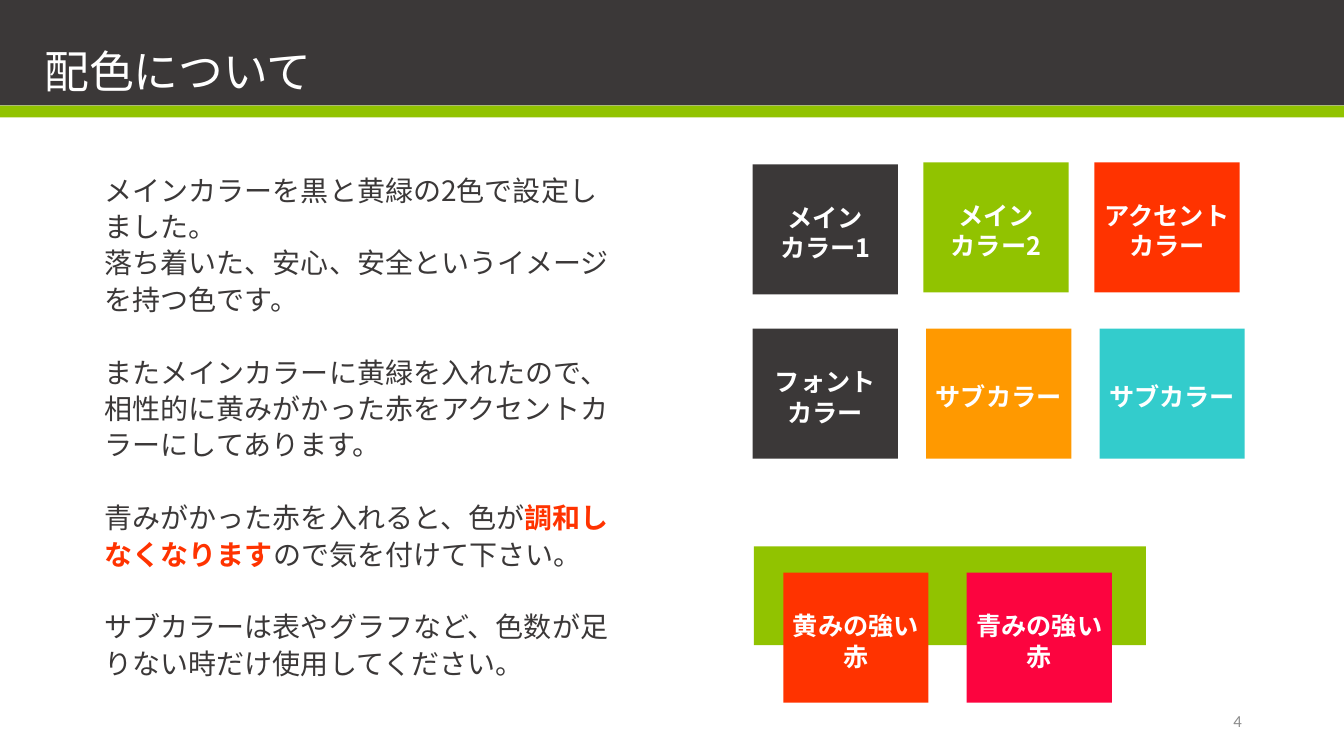
from lxml import etree
from pptx import Presentation
from pptx.dml.color import RGBColor
from pptx.enum.shapes import MSO_SHAPE
from pptx.enum.text import MSO_ANCHOR, MSO_AUTO_SIZE, PP_ALIGN
from pptx.oxml.ns import qn
from pptx.util import Cm, Pt

CHARCOAL = RGBColor(0x3B, 0x38, 0x38)
LIME = RGBColor(0x91, 0xC3, 0x00)
WARM_RED = RGBColor(0xFF, 0x33, 0x00)
COOL_RED = RGBColor(0xFC, 0x04, 0x3F)
ORANGE = RGBColor(0xFF, 0x99, 0x00)
TURQUOISE = RGBColor(0x33, 0xCC, 0xCC)
WHITE = RGBColor(0xFF, 0xFF, 0xFF)
GRAY = RGBColor(0x8C, 0x8C, 0x8C)

JAPANESE_FONT = "Noto Sans CJK JP"
SLIDE_WIDTH, SLIDE_HEIGHT = 33.87, 19.05
SWATCH_WIDTH, SWATCH_HEIGHT = 3.66, 3.28
BODY_LINE = Pt(26)

# Each paragraph: whether a gap precedes it, then its (text, emphasized) runs.
BODY = [
    (False, [("メインカラーを黒と黄緑の2色で設定しました。", False)]),
    (False, [("落ち着いた、安心、安全というイメージを持つ色です。", False)]),
    (True, [("またメインカラーに黄緑を入れたので、"
             "相性的に黄みがかった赤をアクセントカラーにしてあります。", False)]),
    (True, [("青みがかった赤を入れると、色が", False),
            ("調和しなくなります", True),
            ("ので気を付けて下さい。", False)]),
    (True, [("サブカラーは表やグラフなど、"
             "色数が足りない時だけ使用してください。", False)]),
]


def add_run(paragraph, text, size, color, bold=False, font=JAPANESE_FONT):
    run = paragraph.add_run()
    run.text = text
    run.font.size = Pt(size)
    run.font.bold = bold
    run.font.color.rgb = color
    run.font.name = font
    latin = run.font._element.find(qn("a:latin"))
    east_asian = etree.Element(qn("a:ea"), typeface=font)
    latin.addnext(east_asian)


def write_lines(frame, text, align=PP_ALIGN.LEFT, **run_format):
    """Put each line of text in a paragraph of its own, centred vertically."""
    frame.word_wrap = True
    frame.auto_size = MSO_AUTO_SIZE.NONE
    frame.vertical_anchor = MSO_ANCHOR.MIDDLE
    for index, line in enumerate(text.split("\n")):
        paragraph = frame.add_paragraph() if index else frame.paragraphs[0]
        paragraph.alignment = align
        add_run(paragraph, line, **run_format)


def add_rectangle(slide, left, top, width, height, color):
    shape = slide.shapes.add_shape(
        MSO_SHAPE.RECTANGLE, Cm(left), Cm(top), Cm(width), Cm(height))
    shape.shadow.inherit = False
    shape.fill.solid()
    shape.fill.fore_color.rgb = color
    shape.line.fill.background()
    return shape


def add_header(slide, height, stripe, text):
    title = slide.shapes.title
    title.left, title.top = Cm(0.86), Cm(0.94)
    title.width, title.height = Cm(14.1), Cm(1.7)
    write_lines(title.text_frame, text, size=32, color=WHITE)
    bars = [(0, height - stripe, CHARCOAL), (height - stripe, stripe, LIME)]
    for top, bar_height, color in bars:
        bar = add_rectangle(slide, 0, top, SLIDE_WIDTH, bar_height, color)
        title.element.addprevious(bar.element)


def add_body(slide, left, top, width, height):
    box = slide.shapes.add_textbox(Cm(left), Cm(top), Cm(width), Cm(height))
    frame = box.text_frame
    frame.word_wrap = True
    for index, (gap, runs) in enumerate(BODY):
        paragraph = frame.add_paragraph() if index else frame.paragraphs[0]
        paragraph.line_spacing = BODY_LINE
        if gap:
            paragraph.space_before = BODY_LINE
        for text, emphasized in runs:
            add_run(paragraph, text, 20, WARM_RED if emphasized else CHARCOAL,
                    bold=emphasized)


def add_swatches(slide, left, top, pitch, swatches):
    """Place labelled colour blocks in a row, one every pitch."""
    for index, (label, color) in enumerate(swatches):
        swatch = add_rectangle(slide, left + index * pitch, top,
                               SWATCH_WIDTH, SWATCH_HEIGHT, color)
        frame = swatch.text_frame
        frame.margin_left = frame.margin_right = Cm(0.1)
        frame.margin_top, frame.margin_bottom = Cm(0.16), 0
        write_lines(frame, label, align=PP_ALIGN.CENTER,
                    size=18, color=WHITE, bold=True)


def add_palette(slide, left, top):
    add_swatches(slide, left, top + 0.05, 0, [("メイン\nカラー1", CHARCOAL)])
    add_swatches(slide, left + 4.3, top, 4.31, [
        ("メイン\nカラー2", LIME), ("アクセントカラー", WARM_RED)])
    add_swatches(slide, left, top + 4.19, 4.37, [
        ("フォント\nカラー", CHARCOAL),
        ("サブカラー", ORANGE),
        ("サブカラー", TURQUOISE)])


def add_red_comparison(slide, left, top):
    add_rectangle(slide, left, top, 9.88, 2.49, LIME)
    add_swatches(slide, left + 0.74, top + 0.66, 4.62, [
        ("黄みの強い赤", WARM_RED), ("青みの強い赤", COOL_RED)])


def add_page_number(slide, left, top, width, height):
    box = slide.shapes.add_textbox(Cm(left), Cm(top), Cm(width), Cm(height))
    write_lines(box.text_frame, "4", align=PP_ALIGN.RIGHT,
                size=12, color=GRAY, font="Calibri")


def main():
    presentation = Presentation()
    presentation.slide_width = Cm(SLIDE_WIDTH)
    presentation.slide_height = Cm(SLIDE_HEIGHT)
    title_only = presentation.slide_layouts.get_by_name("Title Only")
    slide = presentation.slides.add_slide(title_only)
    add_header(slide, 2.96, 0.3, "配色について")
    add_body(slide, 2.39, 4.17, 13.31, 14.15)
    add_palette(slide, 18.97, 4.09)
    add_red_comparison(slide, 19, 13.77)
    add_page_number(slide, 23.93, 17.65, 7.62, 1.02)
    presentation.save("out.pptx")


if __name__ == "__main__":
    main()
